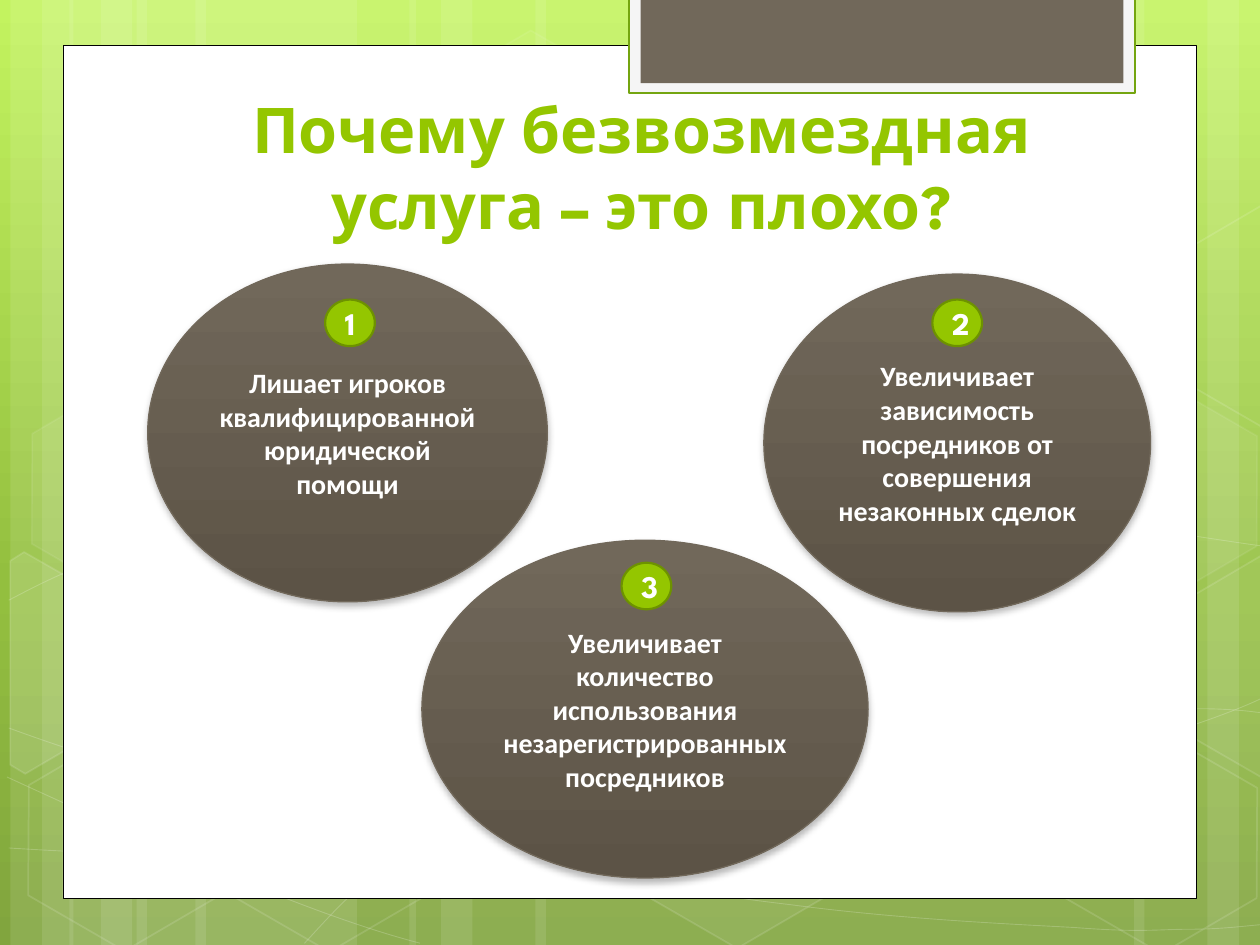
from dataclasses import dataclass
from math import cos, radians, sin

from lxml.etree import SubElement
from pptx import Presentation
from pptx.dml.color import RGBColor
from pptx.enum.shapes import MSO_SHAPE as Preset
from pptx.enum.text import MSO_ANCHOR as Anchor, PP_ALIGN as Align
from pptx.oxml.ns import qn
from pptx.util import Pt

WHITE = RGBColor(0xFF, 0xFF, 0xFF)
BLACK = RGBColor(0, 0, 0)
GREEN = RGBColor(0x94, 0xC6, 0x00)
DARK_GREEN = RGBColor(0x6D, 0x92, 0x00)
TAB_GREEN = RGBColor(0x74, 0xA5, 0x10)
TAB_GRAY = RGBColor(0xF5, 0xF5, 0xF5)
BROWN = RGBColor(0x71, 0x68, 0x5A)
DARK_BROWN = RGBColor(0x5C, 0x53, 0x46)
BACKGROUND_STOPS = [(0, RGBColor(0xC3, 0xF3, 0x5F)), (62, RGBColor(0x93, 0xBF, 0x3F)),
                    (100, RGBColor(0x81, 0xA5, 0x3E))]
BUBBLE_STOPS = [(0, BROWN), (100, DARK_BROWN)]
HEADING_FONT = "League Spartan"
BODY_FONT = "Calibri"
TILT = 30


@dataclass
class Hexagon:
    left: float
    top: float
    fill_opacity: int
    line_opacity: int


@dataclass
class CutHexagon:
    center: tuple
    points: list
    fill_opacity: int


@dataclass
class Reason:
    number: str
    text: str
    left: float
    top: float
    width: float
    badge_left: float
    badge_top: float


STRIPES = [(78, 126), (6, 36), (24, 60), (111.6, 126), (39.6, 36), (57.6, 60),
           (528, 126), (690, 36), (648, 60), (306, 222), (234, 36), (252, 60)]

CURVES = [
    [(5, 484.6), (44, 487, 83, 489, 137, 488), (191, 487, 258, 486, 330, 479),
     (402, 472, 504, 458, 570, 444), (636, 431, 703, 409, 725, 397)],
    [(5, 343), (26, 332, 47, 321, 87, 310), (128, 300, 186, 283, 250, 279),
     (314, 274, 392, 273, 471, 279), (550, 284, 682, 307, 725, 312.5)],
    [(4, 444), (91, 484, 178, 523, 240, 539)],
    [(5, 416), (27, 424, 50, 432, 92, 444), (134, 454, 197, 472, 257, 485),
     (317, 497, 392, 510, 452, 517), (512, 525, 576, 528, 614, 530),
     (652, 533, 662, 531, 680, 531), (699, 531, 712, 529, 725, 528)],
    [(174, 539), (187, 525, 200, 510, 217, 498), (235, 485, 259, 470, 279, 460),
     (300, 450, 312, 446, 338, 438), (364, 431, 413, 421, 438, 416),
     (464, 411, 467, 411, 490, 410), (512, 408, 547, 405, 572, 405),
     (597, 404, 638, 405, 638, 405), (654, 405, 670, 405, 686, 405),
     (699, 405, 711, 406, 718, 407), (724, 407.5, 722, 407, 724, 407.5)],
]

HEXAGONS = [
    Hexagon(240.5, 26, 4, 8), Hexagon(358, 424, 6, 12), Hexagon(8, 425.5, 0, 12),
    Hexagon(10, 224.6, 7, 8), Hexagon(125, 426, 0, 12), Hexagon(542, 326, 10, 12),
    Hexagon(600.5, 427, 0, 12), Hexagon(600.5, 226, 7, 8),
]

CUT_HEXAGONS = [
    CutHexagon((25.9, 385.2), [(5.8, 320.4), (13.7, 315.4), (69.1, 347), (68.4, 410.4),
                               (14.4, 442.1), (5.8, 437)], 10),
    CutHexagon((709.2, 374.4), [(666.7, 349.2), (720.7, 317.5), (726.5, 321.1),
                                (726.5, 441.4), (721.4, 444.2), (666.7, 412.6)], 4),
    CutHexagon((709.2, 173.5), [(666.7, 149), (720.7, 117.4), (727.2, 121),
                                (726.5, 241.2), (721.4, 244.1), (666.7, 212.4)], 0),
]

REASONS = [
    Reason("2", "Увеличивает зависимость посредников от совершения незаконных сделок",
           436.5, 156.6, 221, 532.8, 171.2),
    Reason("1", "Лишает игроков квалифицированной юридической помощи",
           84.4, 150.9, 228.4, 185.8, 171.2),
    Reason("3", "Увеличивает количество использования незарегистрированных посредников",
           241.1, 308.7, 255, 355.2, 321.6),
]


def set_opacity(parent, percent: int) -> None:
    color = parent.find(f"{qn('a:solidFill')}/{qn('a:srgbClr')}")
    SubElement(color, qn("a:alpha"), val=str(percent * 1000))


def set_gradient(fill, element, stops: list) -> None:
    fill.gradient()
    fill.gradient_angle = 270
    stop_list = next(element.iter(qn("a:gsLst")))
    for stop in list(stop_list):
        stop_list.remove(stop)
    for position, color in stops:
        stop = SubElement(stop_list, qn("a:gs"), pos=str(position * 1000))
        SubElement(stop, qn("a:srgbClr"), val=str(color))


def style(shape, fill=None, fill_opacity=100, line=None, line_width=0, line_opacity=100):
    shape.shadow.inherit = False
    properties = shape._element.spPr
    if fill is None or fill_opacity == 0:
        shape.fill.background()
    else:
        shape.fill.solid()
        shape.fill.fore_color.rgb = fill
        if fill_opacity < 100:
            set_opacity(properties, fill_opacity)
    if line is None:
        shape.line.fill.background()
    else:
        shape.line.color.rgb = line
        shape.line.width = Pt(line_width)
        if line_opacity < 100:
            set_opacity(properties.find(qn("a:ln")), line_opacity)


def add_preset(slide, preset, left: float, top: float, width: float, height: float):
    return slide.shapes.add_shape(preset, Pt(left), Pt(top), Pt(width), Pt(height))


def add_outline(slide, points: list, close: bool):
    start, *rest = [(Pt(x), Pt(y)) for x, y in points]
    builder = slide.shapes.build_freeform(*start)
    builder.add_line_segments(rest, close=close)
    return builder.convert_to_shape()


def add_curve(slide, curve: list):
    points = [pair for part in curve for pair in zip(part[::2], part[1::2])]
    shape = add_outline(slide, points, False)
    lines = list(shape._element.iter(qn("a:lnTo")))
    outline = lines[0].getparent()
    for first in range(0, len(lines), 3):
        bezier = SubElement(outline, qn("a:cubicBezTo"))
        for line in lines[first:first + 3]:
            bezier.append(line[0])
            outline.remove(line)
    return shape


def add_cut_hexagon(slide, cut: CutHexagon):
    center_x, center_y = cut.center
    cosine, sine = cos(radians(TILT)), sin(radians(TILT))
    offsets = [(x - center_x, y - center_y) for x, y in cut.points]
    upright = [(center_x + cosine * x + sine * y, center_y - sine * x + cosine * y)
               for x, y in offsets]
    shape = add_outline(slide, upright, True)
    shape.rotation = TILT
    return shape


def write(shape, text: str, font: str, size: float, color: RGBColor, anchor=Anchor.MIDDLE):
    frame = shape.text_frame
    frame.text = text
    frame.word_wrap = True
    frame.vertical_anchor = anchor
    paragraph = frame.paragraphs[0]
    paragraph.alignment = Align.CENTER
    run_font = paragraph.runs[0].font
    run_font.name, run_font.size, run_font.bold = font, Pt(size), True
    run_font.color.rgb = color


def add_reason(slide, reason: Reason) -> None:
    bubble = add_preset(slide, Preset.OVAL, reason.left, reason.top, reason.width, 193)
    style(bubble, line=BROWN, line_width=0.75)
    properties = bubble._element.spPr
    set_gradient(bubble.fill, properties, BUBBLE_STOPS)
    shadow = SubElement(properties.find(qn("a:effectLst")), qn("a:outerShdw"),
                        blurRad=str(Pt(4)), dist=str(Pt(2)), dir="5400000", rotWithShape="0")
    color = SubElement(shadow, qn("a:srgbClr"), val=str(BLACK))
    SubElement(color, qn("a:alpha"), val="28000")
    write(bubble, reason.text, BODY_FONT, 16, WHITE)
    badge = add_preset(slide, Preset.OVAL, reason.badge_left, reason.badge_top, 28.4, 26.6)
    style(badge, GREEN, line=DARK_GREEN, line_width=1.25)
    write(badge, reason.number, HEADING_FONT, 18, WHITE)


def add_backdrop(slide) -> None:
    set_gradient(slide.background.fill, slide._element, BACKGROUND_STOPS)
    for left, width in STRIPES:
        style(add_preset(slide, Preset.RECTANGLE, left, 0, width, 540), WHITE, 10)
    for curve in CURVES:
        style(add_curve(slide, curve), line=WHITE, line_width=0.5, line_opacity=20)
    for hexagon in HEXAGONS:
        shape = add_preset(slide, Preset.HEXAGON, hexagon.left, hexagon.top, 126, 109.4)
        shape.adjustments[0] = 0.285
        shape.rotation = TILT
        style(shape, WHITE, hexagon.fill_opacity, WHITE, 1, hexagon.line_opacity)
    for cut in CUT_HEXAGONS:
        style(add_cut_hexagon(slide, cut), WHITE, cut.fill_opacity, WHITE, 1, 12)
    style(add_preset(slide, Preset.RECTANGLE, 36, 26, 648, 487.2), WHITE,
          line=BLACK, line_width=0.5)
    style(add_preset(slide, Preset.RECTANGLE, 359.2, -1.5, 289.4, 54.7), TAB_GRAY,
          line=TAB_GREEN, line_width=1.25)
    style(add_preset(slide, Preset.RECTANGLE, 366, -1.5, 276, 49), BROWN)


def main() -> None:
    presentation = Presentation()
    presentation.slide_width, presentation.slide_height = Pt(720), Pt(540)
    slide = presentation.slides.add_slide(presentation.slide_layouts[6])
    add_backdrop(slide)
    title = slide.shapes.add_textbox(Pt(90.2), Pt(66.2), Pt(553), Pt(75.6))
    write(title, "Почему безвозмездная услуга – это плохо?", HEADING_FONT, 36, GREEN, Anchor.BOTTOM)
    for reason in REASONS:
        add_reason(slide, reason)
    presentation.save("out.pptx")


if __name__ == "__main__":
    main()
